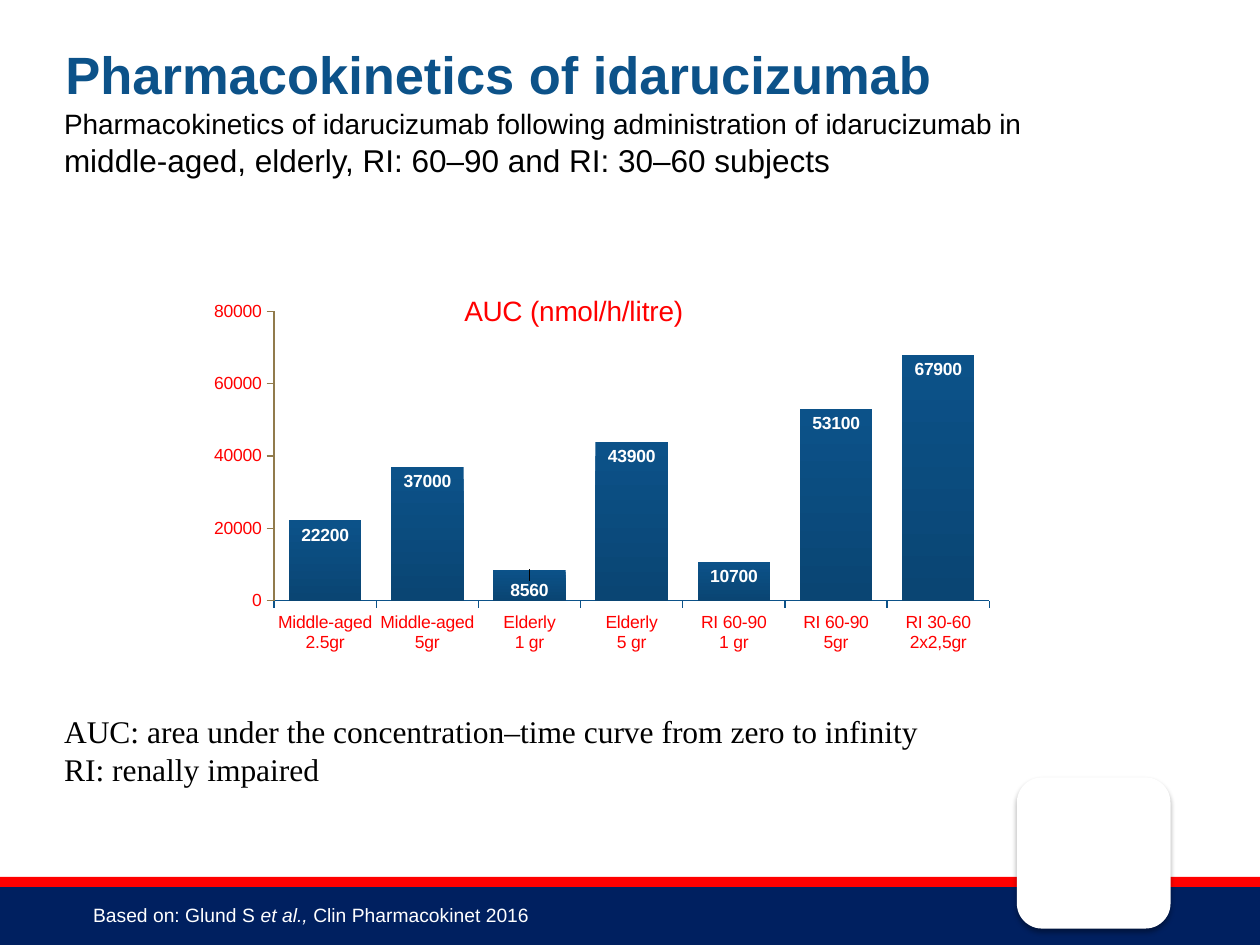
from lxml import etree
from pptx import Presentation
from pptx.chart.data import CategoryChartData
from pptx.dml.color import RGBColor
from pptx.enum.chart import XL_CHART_TYPE, XL_LABEL_POSITION, XL_TICK_MARK
from pptx.enum.shapes import MSO_SHAPE
from pptx.enum.text import MSO_ANCHOR
from pptx.oxml import parse_xml
from pptx.oxml.ns import nsdecls, qn
from pptx.util import Inches, Pt

COLORS = {
    "heading": "0C5289", "bar_base": "0A4573", "value_axis": "917B4C",
    "navy": "002060", "red": "FF0000", "white": "FFFFFF", "black": "000000",
}

# Each text: box, font, colour, paragraphs of (text, size, bold, italic) runs
HEADING = ((0.52, -0.08, 9.07, 0.91), "Arial", "heading",
           [[("Pharmacokinetics of idarucizumab", 30, True, False)]])
TEXTS = [
    ((0.41, 0.8, 8.99, 0.67), "Arial", "black", [
        [("Pharmacokinetics of idarucizumab following administration of idarucizumab in",
          16, False, False)],
        [("middle-aged, elderly, RI: 60–90 and RI: 30–60 subjects", 18, False, False)],
    ]),
    ((0.64, 7.12, 4.32, 0.29), "Arial", "white", [
        [("Based on: Glund S ", 11, False, False), ("et al., ", 11, False, True),
         ("Clin Pharmacokinet 2016", 11, False, False)],
    ]),
    ((0.41, 5.6, 8.12, 0.71), "Times New Roman", "black", [
        [("AUC: area under the concentration–time curve from zero to infinity",
          18, False, False)],
        [("RI: renally impaired", 18, False, False)],
    ]),
]

FOOTER_BANDS = [((0, 7.02, 10, 0.48), "navy"), ((0, 6.96, 10, 0.08), "red")]
BADGE_BOX = (8.07, 6.17, 1.22, 1.2)

CHART_BOX = (1.44, 1.6, 6.68, 4.59)
MEASURE = "AUC (nmol/h/litre)"
AUC_BY_GROUP = [
    ("Middle-aged\n2.5gr", 22200),
    ("Middle-aged\n5gr", 37000),
    ("Elderly\n1 gr", 8560),
    ("Elderly\n5 gr", 43900),
    ("RI 60-90\n1 gr", 10700),
    ("RI 60-90\n5gr", 53100),
    ("RI 30-60\n2x2,5gr", 67900),
]
LOWERED_LABEL = 2


def rgb(name):
    return RGBColor.from_string(COLORS[name])


def inches(box):
    return [Inches(length) for length in box]


def style(font, size, color, bold=False, italic=False, face="Arial"):
    font.name, font.size, font.bold, font.italic = face, Pt(size), bold, italic
    font.color.rgb = rgb(color)


def add_block(slide, kind, box, color):
    block = slide.shapes.add_shape(kind, *inches(box))
    block.shadow.inherit = False
    block.fill.solid()
    block.fill.fore_color.rgb = rgb(color)
    block.line.fill.background()
    return block


def add_text(slide, box, face, color, paragraphs):
    frame = slide.shapes.add_textbox(*inches(box)).text_frame
    frame.word_wrap = True
    for index, runs in enumerate(paragraphs):
        paragraph = frame.paragraphs[0] if index == 0 else frame.add_paragraph()
        for text, size, bold, italic in runs:
            run = paragraph.add_run()
            run.text = text
            style(run.font, size, color, bold, italic, face)
    return frame


def add_badge(slide):
    badge = add_block(slide, MSO_SHAPE.ROUNDED_RECTANGLE, BADGE_BOX, "white")
    effects = badge._element.spPr.find(qn("a:effectLst"))
    effects.append(parse_xml(
        f'<a:outerShdw {nsdecls("a")} blurRad="{Pt(3.1)}" dist="{Pt(1.8)}" dir="5400000" '
        f'rotWithShape="0"><a:srgbClr val="{COLORS["black"]}"><a:alpha val="35000"/>'
        '</a:srgbClr></a:outerShdw>'))


def set_layout(parent, position, **settings):
    """Give a chart part a manual layout, as its child number `position`."""
    old = parent.find(qn("c:layout"))
    if old is not None:
        parent.remove(old)
    layout = etree.Element(qn("c:layout"))
    manual = etree.SubElement(layout, qn("c:manualLayout"))
    for tag, value in settings.items():
        etree.SubElement(manual, qn(f"c:{tag}")).set("val", str(value))
    parent.insert(position, layout)


def style_axis(axis, line_color):
    axis.has_major_gridlines = False
    axis.major_tick_mark = XL_TICK_MARK.OUTSIDE
    axis.minor_tick_mark = XL_TICK_MARK.NONE
    style(axis.tick_labels.font, 10, "red")
    axis.format.line.color.rgb = rgb(line_color)
    axis.format.line.width = Pt(0.75)


def add_auc_chart(slide):
    groups, values = zip(*AUC_BY_GROUP)
    data = CategoryChartData()
    data.categories = groups
    data.add_series(MEASURE, values)
    chart = slide.shapes.add_chart(
        XL_CHART_TYPE.COLUMN_CLUSTERED, *inches(CHART_BOX), data).chart
    style(chart.font, 10, "black")
    chart.has_legend = False

    chart.has_title = True
    title = chart.chart_title
    title.text_frame.text = MEASURE
    style(title.text_frame.paragraphs[0].runs[0].font, 16, "red")
    set_layout(title._element, 1, xMode="edge", yMode="edge", x=0.33, y=0.15)
    title.include_in_layout = False

    style_axis(chart.category_axis, "heading")
    style_axis(chart.value_axis, "value_axis")
    chart.value_axis.minimum_scale, chart.value_axis.maximum_scale = 0, 80000
    chart.value_axis.major_unit = 20000

    plot = chart.plots[0]
    plot.gap_width = 41
    plot.vary_by_categories = False
    series = plot.series[0]
    fill = series.format.fill
    fill.gradient()
    fill.gradient_angle = 270
    for stop, color in zip(fill.gradient_stops, ("heading", "bar_base")):
        stop.color.rgb = rgb(color)

    labels = series.data_labels
    labels.show_value = True
    lowered = series.points[LOWERED_LABEL].data_label
    for label in (labels, lowered):
        label.position = XL_LABEL_POSITION.INSIDE_END
        style(label.font, 10, "white", bold=True)
    set_layout(labels._element.find(qn("c:dLbl")), 1, x=0, y=0.01)

    plot_area = chart._chartSpace.find(f'{qn("c:chart")}/{qn("c:plotArea")}')
    set_layout(plot_area, 0, layoutTarget="inner", xMode="edge", yMode="edge",
               x=0.11, y=0.19, w=0.85, h=0.5)


def main():
    deck = Presentation()
    deck.slide_width, deck.slide_height = Inches(10), Inches(7.5)
    slide = deck.slides.add_slide(deck.slide_layouts[6])

    for box, color in FOOTER_BANDS:
        add_block(slide, MSO_SHAPE.RECTANGLE, box, color)
    add_badge(slide)

    heading = add_text(slide, *HEADING)
    heading.vertical_anchor = MSO_ANCHOR.BOTTOM
    heading.margin_left = heading.margin_right = 0
    heading.margin_top = heading.margin_bottom = 0
    heading.paragraphs[0].line_spacing = Pt(30)

    for text in TEXTS:
        add_text(slide, *text)
    add_auc_chart(slide)
    deck.save("out.pptx")


if __name__ == "__main__":
    main()
